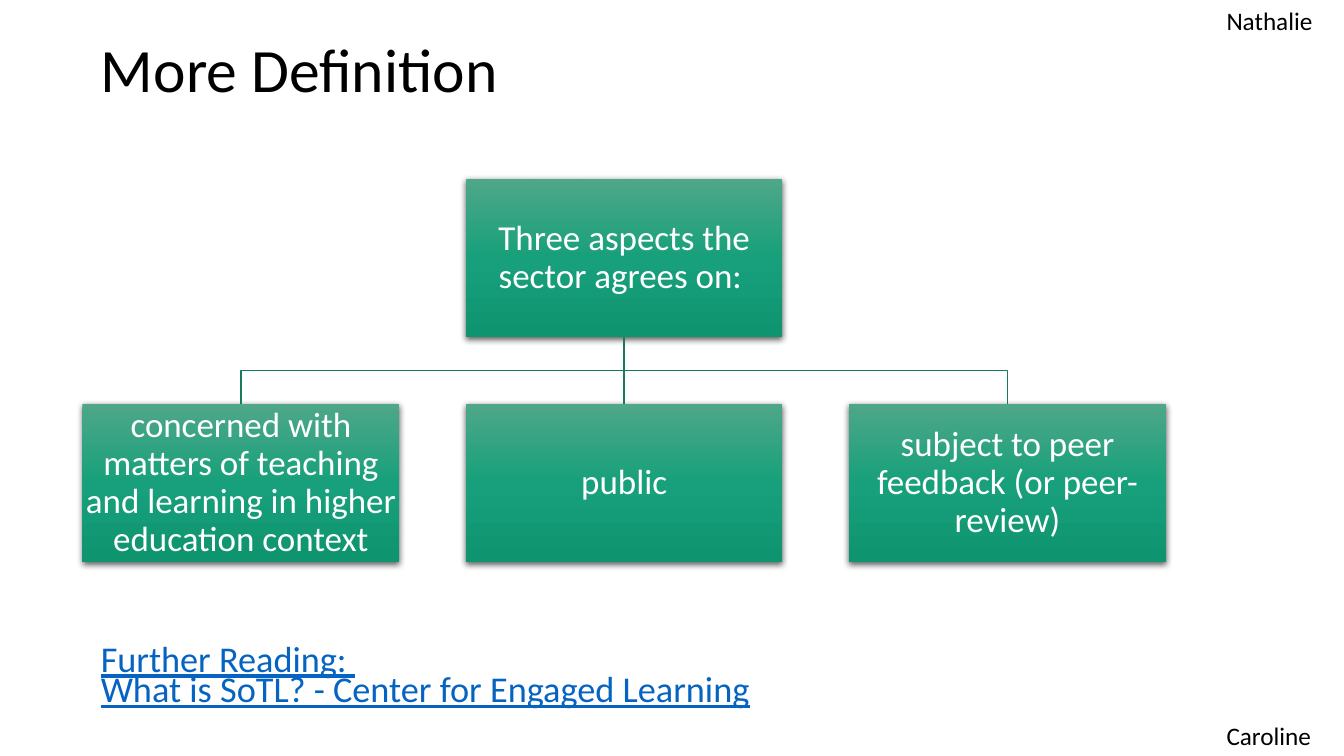
import copy
from dataclasses import dataclass

import pptx
import pptx.dml.color
import pptx.enum.shapes
import pptx.enum.text
import pptx.oxml
import pptx.oxml.ns
import pptx.util
from pptx.util import Cm

ALIGN = pptx.enum.text.PP_ALIGN
ANCHOR = pptx.enum.text.MSO_ANCHOR
qn = pptx.oxml.ns.qn

SHADOW = (
    f'<a:outerShdw {pptx.oxml.ns.nsdecls("a")} blurRad="57150" dist="19050" '
    'dir="5400000" algn="ctr" rotWithShape="0">'
    '<a:srgbClr val="000000"><a:alpha val="63000"/></a:srgbClr></a:outerShdw>'
)


@dataclass
class Theme:
    font: str = "Calibri"
    black: str = "000000"
    white: str = "FFFFFF"
    link: str = "0563C1"
    branch: str = "177B60"
    box_gradient: tuple = ("4EA788", "17A07B", "0F9470")
    title_size: float = 44
    box_size: float = 25
    reading_size: float = 25.9
    name_size: float = 18


def rgb(color):
    return pptx.dml.color.RGBColor.from_string(color)


class SlideBuilder:
    def __init__(self, slide, theme):
        self.slide = slide
        self.theme = theme

    def fill_text(self, shape, lines, size, color, align=ALIGN.LEFT, anchor=ANCHOR.TOP,
                  spacing=1.0, underline=None, wrap=True, inset=None):
        frame = shape.text_frame
        frame.auto_size = pptx.enum.text.MSO_AUTO_SIZE.NONE
        frame.word_wrap = wrap
        frame.vertical_anchor = anchor
        if inset is not None:
            frame.margin_left = frame.margin_right = inset
            frame.margin_top = frame.margin_bottom = inset
        paragraph = frame.paragraphs[0]
        paragraph.alignment = align
        paragraph.line_spacing = spacing
        for index, line in enumerate(lines):
            if index:
                paragraph.add_line_break()
            run = paragraph.add_run()
            run.text = line
            run.font.name = self.theme.font
            run.font.size = pptx.util.Pt(size)
            run.font.color.rgb = rgb(color)
            run.font.underline = underline

    def title(self, text, left, top, width, height):
        title = self.slide.shapes.title
        title.left, title.top, title.width, title.height = left, top, width, height
        self.fill_text(title, [text], self.theme.title_size, self.theme.black,
                       anchor=ANCHOR.MIDDLE, spacing=0.9)

    def text(self, lines, left, top, width, height, size, color, **style):
        box = self.slide.shapes.add_textbox(left, top, width, height)
        self.fill_text(box, lines, size, color, **style)

    def aspect_box(self, text, left, top, width, height):
        box = self.slide.shapes.add_shape(
            pptx.enum.shapes.MSO_SHAPE.RECTANGLE, left, top, width, height)
        box.line.fill.background()
        # Three-stop gradient, light at the top
        box.fill.gradient()
        box.fill.gradient_angle = 270
        properties = box._element.spPr
        stops = properties.find(".//" + qn("a:gsLst"))
        stops.insert(1, copy.deepcopy(stops[0]))
        for stop, color, position in zip(
                box.fill.gradient_stops, self.theme.box_gradient, (0, 0.5, 1)):
            stop.color.rgb = rgb(color)
            stop.position = position
        # Soft shadow below
        box.shadow.inherit = False
        properties.find(qn("a:effectLst")).append(pptx.oxml.parse_xml(SHADOW))
        self.fill_text(box, [text], self.theme.box_size, self.theme.white,
                       align=ALIGN.CENTER, anchor=ANCHOR.MIDDLE, spacing=0.9,
                       inset=Cm(0.04))
        return box

    def style_branch(self, branch):
        branch.line.color.rgb = rgb(self.theme.branch)
        branch.line.width = pptx.util.Pt(1)

    def straight_branch(self, parent, child):
        center = parent.left + parent.width // 2
        branch = self.slide.shapes.add_connector(
            pptx.enum.shapes.MSO_CONNECTOR.STRAIGHT,
            center, parent.top + parent.height, center, child.top)
        branch.begin_connect(parent, 2)
        branch.end_connect(child, 0)
        self.style_branch(branch)
        branch._element.spPr.append(pptx.oxml.parse_xml(
            f'<a:effectLst {pptx.oxml.ns.nsdecls("a")}/>'))

    def bent_branch(self, parent, child):
        start_x, start_y = parent.left + parent.width // 2, parent.top + parent.height
        end_x, end_y = child.left + child.width // 2, child.top
        middle_y = (start_y + end_y) // 2
        outline = self.slide.shapes.build_freeform(start_x, start_y)
        outline.add_line_segments(
            [(start_x, middle_y), (end_x, middle_y), (end_x, end_y)], close=False)
        branch = outline.convert_to_shape()
        branch.fill.background()
        branch.shadow.inherit = False
        self.style_branch(branch)


def main():
    presentation = pptx.Presentation()
    presentation.slide_width = Cm(33.87)
    presentation.slide_height = Cm(19.05)
    theme = Theme()
    builder = SlideBuilder(
        presentation.slides.add_slide(presentation.slide_layouts[5]), theme)

    # Title
    builder.title("More Definition", Cm(2.29), Cm(0), Cm(29.21), Cm(3.68))

    # Tree of the three aspects
    box_width, box_height = Cm(7.98), Cm(3.99)
    first_left, column_step = Cm(2.08), Cm(9.66)
    root = builder.aspect_box("Three aspects the sector agrees on: ",
                              first_left + column_step, Cm(4.51), box_width, box_height)
    aspects = [
        builder.aspect_box(text, first_left + column * column_step, Cm(10.18),
                           box_width, box_height)
        for column, text in enumerate((
            "concerned with matters of teaching and learning in higher education context",
            "public",
            "subject to peer feedback (or peer-review)",
        ))
    ]
    teaching, public, peer_feedback = aspects
    builder.bent_branch(root, teaching)
    builder.straight_branch(root, public)
    builder.bent_branch(root, peer_feedback)

    # Further reading
    builder.text(["Further Reading: ", "What is SoTL? - Center for Engaged Learning"],
                 Cm(2.29), Cm(16.2), Cm(29.21), Cm(1.93),
                 theme.reading_size, theme.link, spacing=0.7, underline=True)

    # Presenter names in the corners
    for presenter, top in (("Nathalie", Cm(0)), ("Caroline", Cm(18.03))):
        builder.text([presenter], Cm(30.66), top, Cm(2.68), Cm(1.02),
                     theme.name_size, theme.black, wrap=False)

    presentation.save("out.pptx")


if __name__ == "__main__":
    main()
